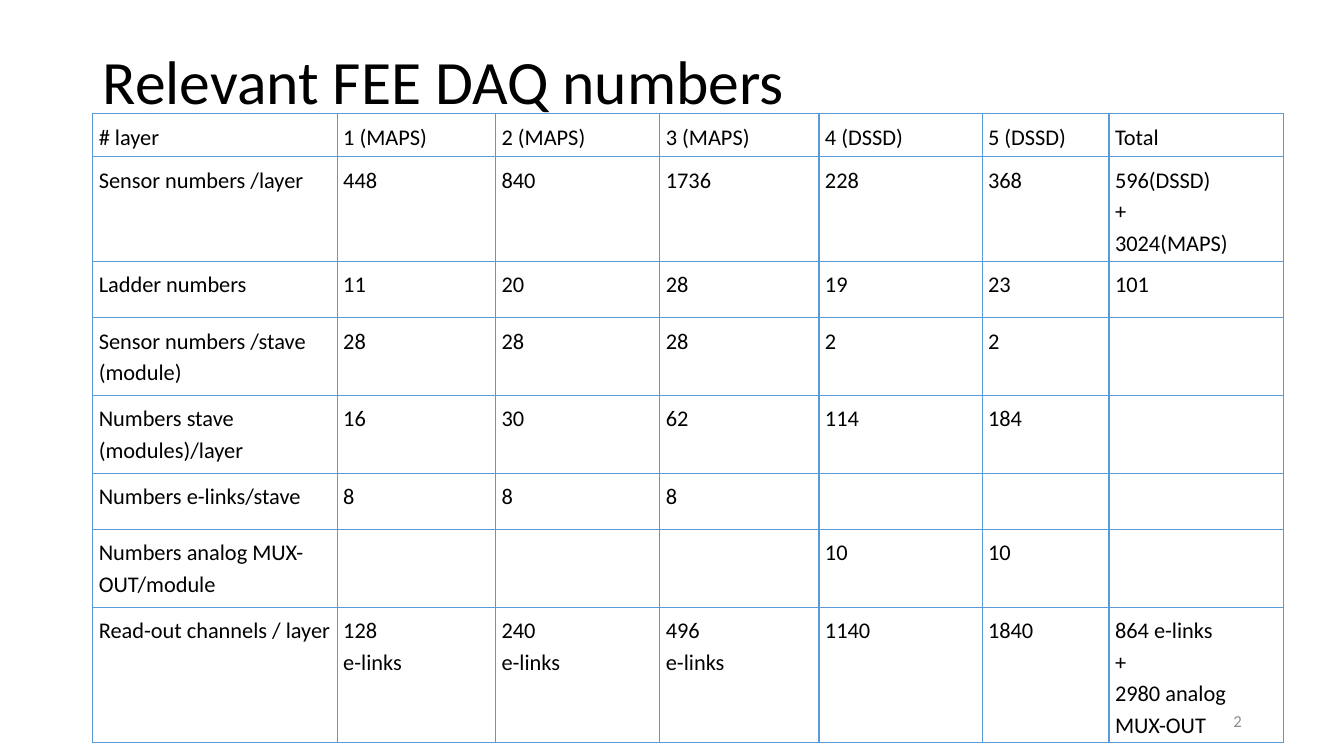
from lxml.etree import SubElement
from pptx import Presentation
from pptx.dml.color import RGBColor
from pptx.enum.text import MSO_ANCHOR as Anchor, PP_ALIGN as Align
from pptx.oxml.ns import qn
from pptx.util import Cm, Pt

FONT = "Calibri"
BLACK, GREY, BORDER = "000000", "8C8C8C", "5B9BD5"
CELL_INSET = 0.15
COLUMN_WIDTHS = [6.16, 3.99, 4.14, 4.01, 4.11, 3.2, 4.39]
ROW_HEIGHTS = [0.91, 2.03, 1.42, 1.96, 1.96, 1.42, 1.96, 2.39]
DAQ_ROWS = [
    ["# layer", "1 (MAPS)", "2 (MAPS)", "3 (MAPS)", "4 (DSSD)", "5 (DSSD)", "Total"],
    ["Sensor numbers /layer", "448", "840", "1736", "228", "368",
     "596(DSSD)\n+\n3024(MAPS)"],
    ["Ladder numbers", "11", "20", "28", "19", "23", "101"],
    ["Sensor numbers /stave (module)", "28", "28", "28", "2", "2", ""],
    ["Numbers stave (modules)/layer", "16", "30", "62", "114", "184", ""],
    ["Numbers e-links/stave", "8", "8", "8", "", "", ""],
    ["Numbers analog MUX-OUT/module", "", "", "", "10", "10", ""],
    ["Read-out channels / layer", "128\ne-links", "240\ne-links", "496\ne-links",
     "1140", "1840", "864 e-links\n+\n2980 analog MUX-OUT"],
]


def color(hex_string):
    return RGBColor.from_string(hex_string)


def write_text(frame, text, size=16, hex_color=BLACK, align=Align.LEFT, spacing=1.0):
    """Fill a text frame, one paragraph per line of text."""
    frame.word_wrap = True
    frame.text = text
    for paragraph in frame.paragraphs:
        paragraph.alignment = align
        paragraph.line_spacing = spacing
        paragraph.font.name = FONT
        paragraph.font.size = Pt(size)
        paragraph.font.color.rgb = color(hex_color)


def add_text(slide, box, text, **text_format):
    shape = slide.shapes.add_textbox(*map(Cm, box))
    shape.text_frame.vertical_anchor = Anchor.MIDDLE
    write_text(shape.text_frame, text, **text_format)


def set_borders(cell, hex_color, width):
    properties = cell._tc.get_or_add_tcPr()
    for position, side in enumerate(("a:lnL", "a:lnR", "a:lnT", "a:lnB")):
        line = SubElement(properties, qn(side), w=str(Pt(width)))
        fill = SubElement(line, qn("a:solidFill"))
        SubElement(fill, qn("a:srgbClr"), val=hex_color)
        properties.insert(position, line)


def add_daq_table(slide, left, top):
    shape = slide.shapes.add_table(
        len(DAQ_ROWS), len(COLUMN_WIDTHS), Cm(left), Cm(top),
        Cm(sum(COLUMN_WIDTHS)), Cm(sum(ROW_HEIGHTS)))
    table = shape.table
    table.first_row = table.horz_banding = False
    for column, width in zip(table.columns, COLUMN_WIDTHS):
        column.width = Cm(width)
    for row, height, texts in zip(table.rows, ROW_HEIGHTS, DAQ_ROWS):
        row.height = Cm(height)
        for cell, text in zip(row.cells, texts):
            cell.margin_left = cell.margin_right = Cm(CELL_INSET)
            cell.margin_top = cell.margin_bottom = Cm(CELL_INSET)
            cell.fill.background()
            set_borders(cell, BORDER, 1)
            write_text(cell.text_frame, text, spacing=1.15)


def main():
    presentation = Presentation()
    presentation.slide_width, presentation.slide_height = Cm(33.87), Cm(19.05)
    slide = presentation.slides.add_slide(presentation.slide_layouts[6])
    add_text(slide, (2.34, 0.28, 29.21, 3.68), "Relevant FEE DAQ numbers",
             size=44, spacing=0.9)
    add_daq_table(slide, 2.34, 2.87)
    add_text(slide, (23.93, 17.65, 7.62, 1.02), "2",
             size=12, hex_color=GREY, align=Align.RIGHT)
    presentation.save("out.pptx")


if __name__ == "__main__":
    main()
